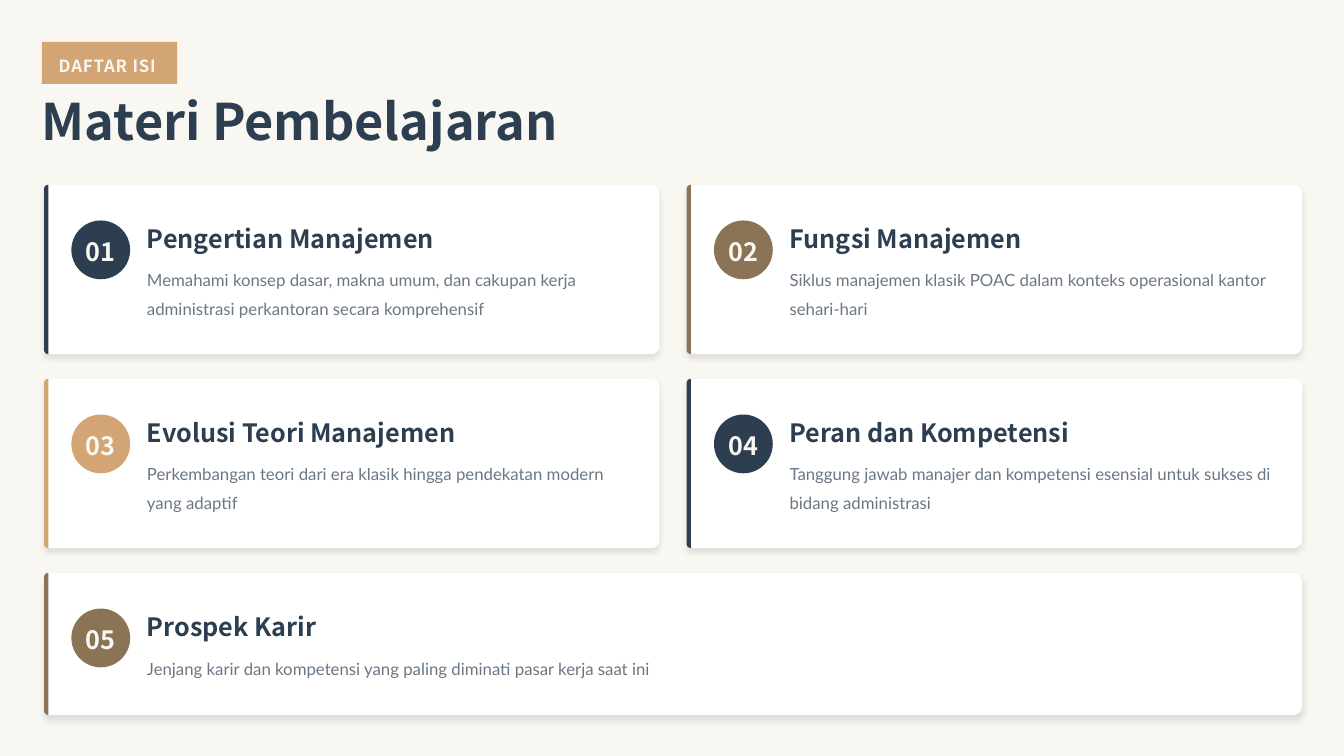
import math

import pptx
import pptx.util
import pptx.dml.color
import pptx.enum.shapes
import pptx.enum.text
import pptx.oxml.ns
from lxml import etree

COLOURS = {"paper": "F8F7F2", "navy": "2C3E50", "brown": "8B7355",
           "sand": "D4A574", "white": "FFFFFF", "black": "000000"}
HEADING_FONT, BODY_FONT = "Noto Sans CJK SC", "Lato"
COLUMNS, ROWS = 32, 18
UNIT = 381000  # one square grid cell, in EMU

FORMATS = {
    "tag": {"size": 12, "bold": True, "name": HEADING_FONT},
    "title": {"size": 36, "bold": True, "name": HEADING_FONT},
    "heading": {"size": 18, "bold": True, "name": HEADING_FONT},
    "body": {"size": 12, "bold": False, "name": BODY_FONT},
}
SPACING = {"tag": 1.3, "title": 0.8, "heading": 1.1, "body": 1.4}

TOPICS = [
    ("Pengertian Manajemen", "Memahami konsep dasar, makna umum, dan cakupan "
     "kerja administrasi perkantoran secara komprehensif", "navy"),
    ("Fungsi Manajemen", "Siklus manajemen klasik POAC dalam konteks "
     "operasional kantor sehari-hari", "brown"),
    ("Evolusi Teori Manajemen", "Perkembangan teori dari era klasik hingga "
     "pendekatan modern yang adaptif", "sand"),
    ("Peran dan Kompetensi", "Tanggung jawab manajer dan kompetensi esensial "
     "untuk sukses di bidang administrasi", "navy"),
    ("Prospek Karir", "Jenjang karir dan kompetensi yang paling diminati "
     "pasar kerja saat ini", "brown"),
]


def cells(*lengths):
    return [pptx.util.Emu(round(length * UNIT)) for length in lengths]


def rgb(colour):
    return pptx.dml.color.RGBColor.from_string(COLOURS[colour])


def add_element(parent, tag, **attributes):
    element = etree.SubElement(parent, pptx.oxml.ns.qn(tag))
    for key, value in attributes.items():
        element.set(key, str(value))
    return element


class Deck:
    """Holds the style and the current slide; lengths are grid cells."""

    def __init__(self):
        self.presentation = pptx.Presentation()
        self.presentation.slide_width, self.presentation.slide_height = cells(COLUMNS, ROWS)
        self.slide = self.presentation.slides.add_slide(self.presentation.slide_layouts[6])
        self.slide.background.fill.solid()
        self.slide.background.fill.fore_color.rgb = rgb("paper")

    def paint(self, shape, colour):
        shape.shadow.inherit = False
        shape.fill.solid()
        shape.fill.fore_color.rgb = rgb(colour)
        shape.line.fill.background()
        return shape

    def preset(self, kind, box, colour):
        return self.paint(self.slide.shapes.add_shape(kind, *cells(*box)), colour)

    def panel(self, box, colour, left_radius, right_radius):
        """Rectangle whose left and right corners have their own radius."""
        left, top, width, height = box
        right, bottom = left + width, top + height
        a, b = left_radius, right_radius
        corners = [(left + a, top + a, a, 180), (right - b, top + b, b, 270),
                   (right - b, bottom - b, b, 0), (left + a, bottom - a, a, 90)]
        outline = [cells(x + r * math.cos(math.radians(start + turn)),
                         y + r * math.sin(math.radians(start + turn)))
                   for x, y, r, start in corners
                   for turn in (range(0, 91, 10) if r else [0])]
        builder = self.slide.shapes.build_freeform(*outline[0])
        builder.add_line_segments(outline[1:], close=True)
        return self.paint(builder.convert_to_shape(), colour)

    def cast_shadow(self, shape):
        effects = shape.element.spPr.find(pptx.oxml.ns.qn("a:effectLst"))
        shadow = add_element(effects, "a:outerShdw", blurRad=pptx.util.Pt(4.5),
                             dist=pptx.util.Pt(3), dir=90 * 60000,
                             algn="ctr", rotWithShape=0)
        tint = add_element(shadow, "a:srgbClr", val=COLOURS["black"])
        add_element(tint, "a:alpha", val=10000)

    def label(self, shape, words, style, colour, inset=0, tracking=None,
              opacity=None, align=pptx.enum.text.PP_ALIGN.LEFT):
        margin, = cells(inset)
        layout = {"word_wrap": True, "margin_left": margin, "margin_right": 0,
                  "margin_top": 0, "margin_bottom": 0,
                  "vertical_anchor": pptx.enum.text.MSO_ANCHOR.MIDDLE}
        for key, value in layout.items():
            setattr(shape.text_frame, key, value)
        paragraph = shape.text_frame.paragraphs[0]
        paragraph.alignment = align
        paragraph.line_spacing = SPACING[style]
        run = paragraph.add_run()
        run.text = words
        for key, value in FORMATS[style].items():
            setattr(run.font, key, pptx.util.Pt(value) if key == "size" else value)
        run.font.color.rgb = rgb(colour)
        properties = run._r.get_or_add_rPr()
        if tracking:
            properties.set("spc", str(tracking))
        if opacity:
            tint = properties.find(".//" + pptx.oxml.ns.qn("a:srgbClr"))
            add_element(tint, "a:alpha", val=opacity * 1000)

    def text(self, box, words, style, **options):
        frame = self.slide.shapes.add_textbox(*cells(*box))
        self.label(frame, words, style, "navy", **options)

    def card(self, box, number, heading, summary, accent, lines):
        left, top, width, height = box
        self.cast_shadow(self.panel(box, "white", 0.1, 0.2))
        self.panel((left, top, 0.1, height), accent, 0.1, 0)
        badge = self.preset(pptx.enum.shapes.MSO_SHAPE.OVAL,
                            (left + 0.65, top + 0.85, 1.4, 1.4), accent)
        self.label(badge, f"{number:02d}", "heading", "paper",
                   align=pptx.enum.text.PP_ALIGN.CENTER)
        text_left, text_width = left + 2.45, width - 2.85
        self.text((text_left, top + 0.85, text_width, 0.8), heading, "heading")
        self.text((text_left, top + 1.86, text_width, 0.65 * lines), summary,
                  "body", opacity=70)


def main():
    deck = Deck()

    # Header
    tag = deck.preset(pptx.enum.shapes.MSO_SHAPE.RECTANGLE, (1, 1, 3.22, 1), "sand")
    deck.label(tag, "DAFTAR ISI", "tag", "paper", inset=0.4, tracking=60)
    deck.text((1, 2.4, 30.6, 1.2), "Materi Pembelajaran", "title")

    # Topic cards: two columns, with the last card across both
    card_width, column_gap = 14.65, 0.65
    for index, (heading, summary, accent) in enumerate(TOPICS):
        row, column = divmod(index, 2)
        last = index == len(TOPICS) - 1
        left = 1.05 + column * (card_width + column_gap)
        width = 2 * card_width + column_gap if last else card_width
        height = 3.38 if last else 4.03
        deck.card((left, 4.4 + row * 4.62, width, height), index + 1,
                  heading, summary, accent, lines=1 if last else 2)

    deck.presentation.save("out.pptx")


if __name__ == "__main__":
    main()
